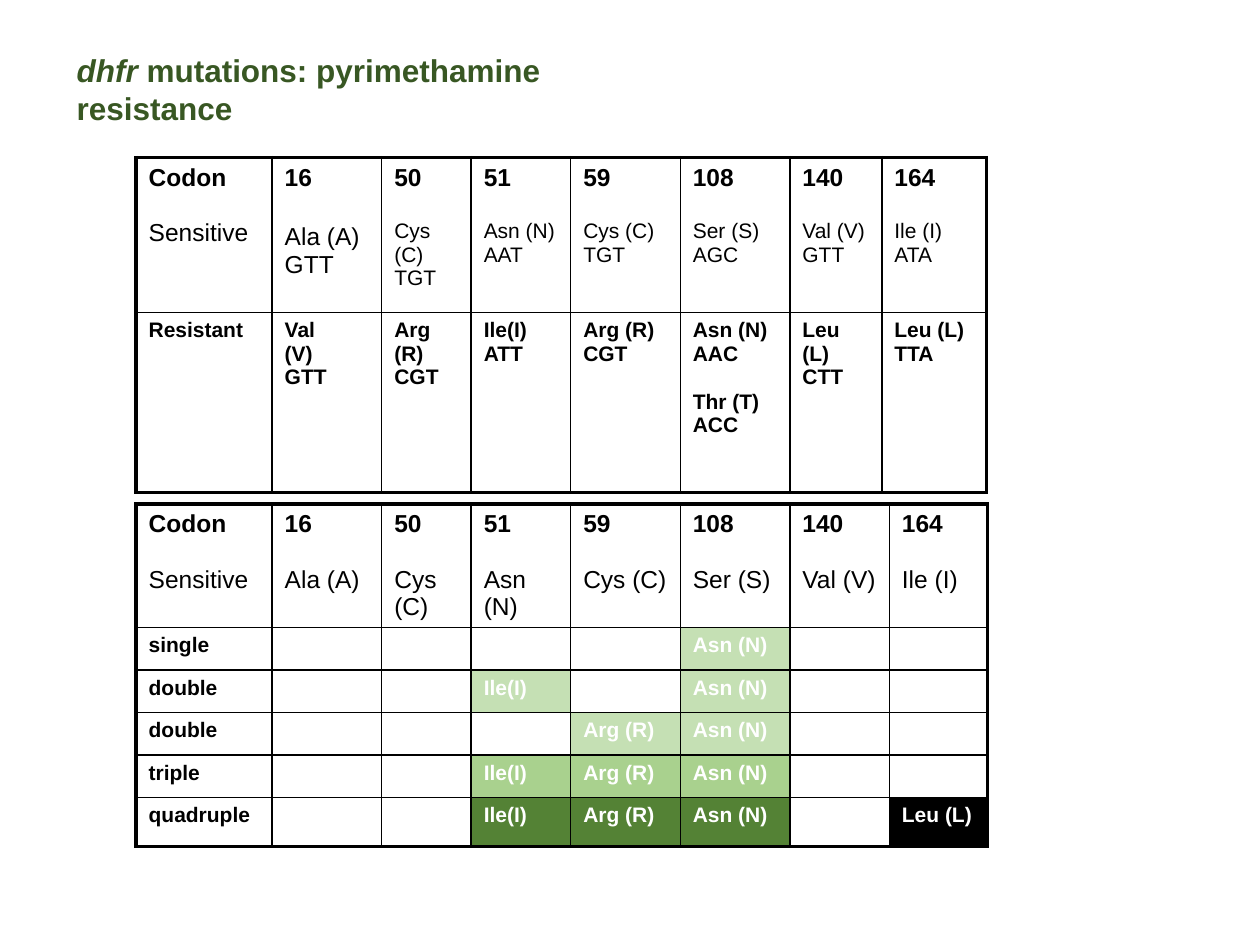
from lxml import etree
from pptx import Presentation
from pptx import util as u
from pptx.dml.color import RGBColor
from pptx.oxml import ns

HUES = {"title": "385723", "ink": "000000", "white": "FFFFFF",
        "light": "C5E0B4", "mid": "A9D18E", "dark": "548235"}
THIN, THICK = 1, 2.25
LEAD = 1.15  # line height per point of type

deck = Presentation()
deck.slide_width, deck.slide_height = u.Inches(10), u.Inches(7.5)
page = deck.slides.add_slide(deck.slide_layouts[6])


def add_run(para, words, size, bold, hue, slant=False):
    run = para.add_run()
    run.text = words
    font = run.font
    font.name, font.size, font.bold, font.italic = "Arial", u.Pt(size), bold, slant
    font.color.rgb = RGBColor.from_string(HUES[hue])


def add_grid(top, cols, rows, cells):
    """Each cell is (lines, fill, hue); each line is (words, size, bold, gap above)."""
    grid = page.shapes.add_table(len(rows), len(cols), u.Inches(1.08), u.Inches(top),
                                 u.Inches(sum(cols)), u.Inches(sum(rows))).table
    grid.first_row = grid.horz_banding = False
    for col, wide in zip(grid.columns, cols):
        col.width = u.Inches(wide)
    for row, high in zip(grid.rows, rows):
        row.height = u.Inches(high)
    for r, line in enumerate(cells):
        for c, (lines, fill, hue) in enumerate(line):
            cell = grid.cell(r, c)
            # Thick outer frame, thin inner rules
            props = cell._tc.get_or_add_tcPr()
            edges = {"L": c == 0, "R": c == len(cols) - 1,
                     "T": r == 0, "B": r == len(rows) - 1}
            for side, outer in edges.items():
                rule = etree.SubElement(props, ns.qn("a:ln" + side),
                                        w=str(u.Pt(THICK if outer else THIN)))
                paint = etree.SubElement(rule, ns.qn("a:solidFill"))
                etree.SubElement(paint, ns.qn("a:srgbClr"), val=HUES["ink"])
            if fill:
                cell.fill.solid()
                cell.fill.fore_color.rgb = RGBColor.from_string(HUES[fill])
            else:
                cell.fill.background()
            # Text
            frame = cell.text_frame
            for n, (words, size, bold, gap) in enumerate(lines):
                para = frame.add_paragraph() if n else frame.paragraphs[0]
                para.space_before = u.Pt(round(gap * LEAD, 1))
                add_run(para, words, size, bold, hue)
            if not lines:
                etree.SubElement(frame.paragraphs[0]._p, ns.qn("a:endParaRPr"), sz="1400")


# Codon, sensitive amino acid, sensitive triplet, resistant lines
codons = [
    ("16", "Ala (A)", "GTT", ["Val", "(V)", "GTT"]),
    ("50", "Cys (C)", "TGT", ["Arg (R)", "CGT"]),
    ("51", "Asn (N)", "AAT", ["Ile(I)", "ATT"]),
    ("59", "Cys (C)", "TGT", ["Arg (R)", "CGT"]),
    ("108", "Ser (S)", "AGC", ["Asn (N)", "AAC", "Thr (T)", "ACC"]),
    ("140", "Val (V)", "GTT", ["Leu (L)", "CTT"]),
    ("164", "Ile (I)", "ATA", ["Leu (L)", "TTA"]),
]
label = ([("Codon", 14, True, 0), ("Sensitive", 14, False, 14)], None, "ink")

# Upper table: sensitive and resistant codons
head = [label]
tail = [([("Resistant", 12, True, 0)], None, "ink")]
for num, acid, bases, swaps in codons:
    size, gap = (14, 16) if num == "16" else (12, 14)
    head.append(([(num, 14, True, 0), (acid, size, False, gap),
                  (bases, size, False, 0)], None, "ink"))
    tail.append(([(swap, 12, True, 12 if swap == "Thr (T)" else 0)
                  for swap in swaps], None, "ink"))
add_grid(1.25, [1.08, 0.87, 0.71, 0.79, 0.87, 0.87, 0.73, 0.83],
         [1.23, 1.43], [head, tail])

# Lower table: combined mutations, marked by codon
combos = [
    ("single", "light", ["108"]),
    ("double", "light", ["51", "108"]),
    ("double", "light", ["59", "108"]),
    ("triple", "mid", ["51", "59", "108"]),
    ("quadruple", "dark", ["51", "59", "108", "164"]),
]
body = [[label] + [([(num, 14, True, 0), (acid, 14, False, 14)], None, "ink")
                   for num, acid, bases, swaps in codons]]
for name, shade, hits in combos:
    line = [([(name, 12, True, 0)], None, "ink")]
    for num, acid, bases, swaps in codons:
        if num in hits:
            fill = "ink" if num == "164" else shade
            line.append(([(swaps[0], 12, True, 0)], fill, "white"))
        else:
            line.append(([], None, "ink"))
    body.append(line)
add_grid(4, [1.08, 0.87, 0.71, 0.79, 0.87, 0.87, 0.79, 0.78],
         [0.89, 0.29, 0.33, 0.33, 0.33, 0.39], body)

# Title
box = page.shapes.add_textbox(u.Inches(0.51), u.Inches(0.36), u.Inches(4.68), u.Inches(0.37))
box.text_frame.word_wrap = True
para = box.text_frame.paragraphs[0]
add_run(para, "dhfr", 18, True, "title", True)
add_run(para, " mutations: pyrimethamine resistance", 18, True, "title")

deck.save("out.pptx")
